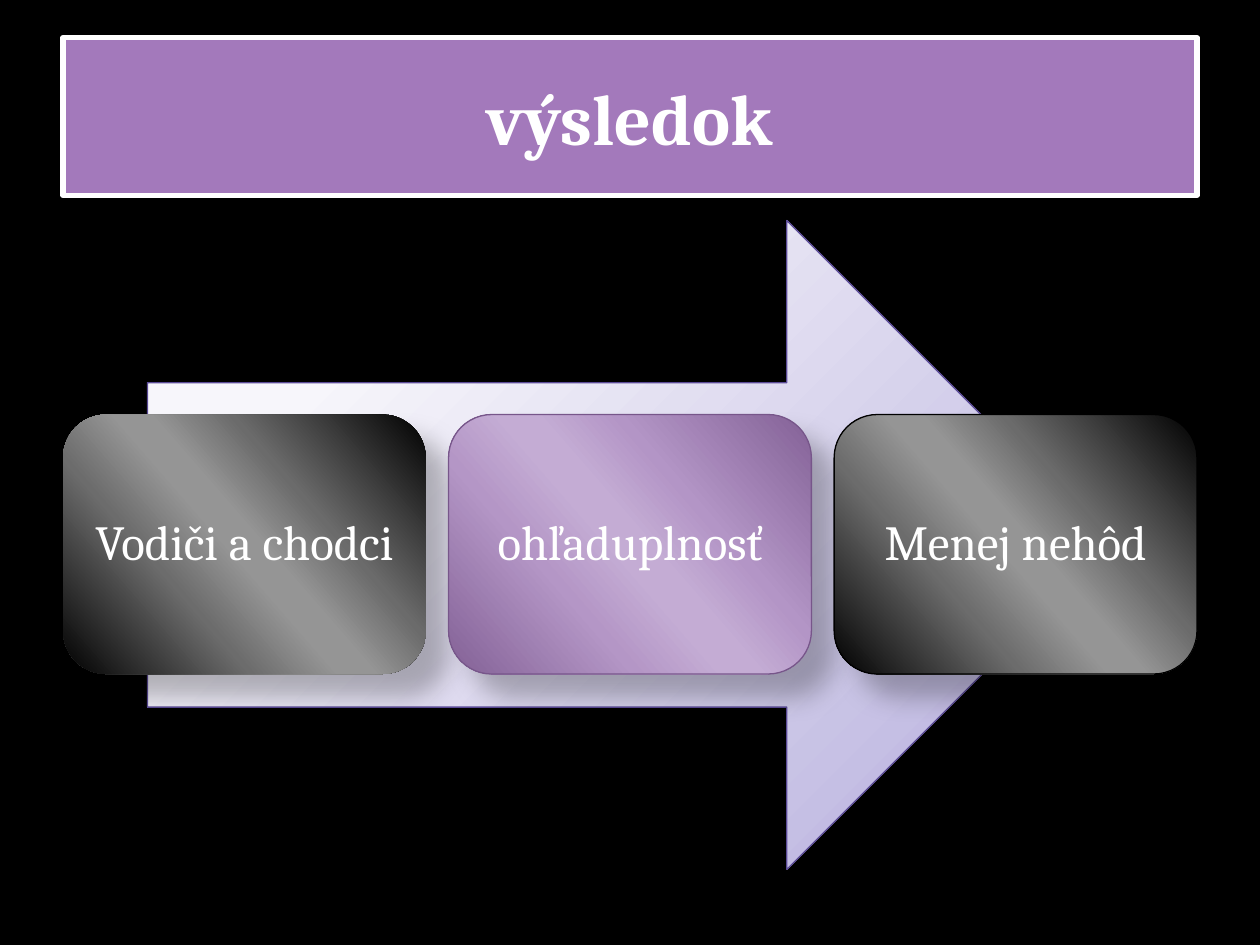
from lxml import etree
from pptx import Presentation
from pptx.dml.color import RGBColor
from pptx.enum.shapes import MSO_SHAPE
from pptx.enum.text import MSO_ANCHOR, PP_ALIGN
from pptx.oxml import parse_xml
from pptx.oxml.ns import nsdecls, qn
from pptx.util import Inches, Pt

RECT, ARROW, CARD = MSO_SHAPE.RECTANGLE, MSO_SHAPE.RIGHT_ARROW, MSO_SHAPE.ROUNDED_RECTANGLE
MIDDLE, CENTER = MSO_ANCHOR.MIDDLE, PP_ALIGN.CENTER

# Content
TITLE = "výsledok"
STEPS = [  # text, gradient, line colour
    ("Vodiči a chodci", "dark", None),
    ("ohľaduplnosť", "violet", "violet_line"),
    ("Menej nehôd", "dark", "black"),
]

# Style
FONT = "Cambria"
COLORS = {
    "black": "000000", "white": "FFFFFF", "title": "A379BB",
    "arrow_line": "5A4A96", "violet_line": "77568A",
}
GRADIENTS = {  # (position in percent, colour)
    "arrow": [(20, "F7F6FB"), (100, "B2AADB")],
    "dark": [(0, "000000"), (33, "6B6B6B"), (47, "959595"),
             (53, "959595"), (68, "6C6C6C"), (100, "000000")],
    "violet": [(0, "836196"), (33, "B395C6"), (47, "C4ACD4"),
               (53, "C4ACD4"), (68, "B496C6"), (100, "836196")],
}
LINEAR = '<a:lin ang="8340000" scaled="0"/>'
RADIAL = ('<a:path path="circle"><a:fillToRect l="-15000" t="-15000" '
          'r="115000" b="115000"/></a:path>')
SOFT_SHADOW = (35, 10.2, 8)  # opacity in percent, blur and distance in points
DEEP_SHADOW = (26, 15, 18)

# Layout
MARGIN, CONTENT_W = 0.5, 9
CARD_W, CARD_H, CARD_TOP = 2.88, 2.06, 3.29
CARD_STEP = (CONTENT_W - CARD_W) / (len(STEPS) - 1)


def rgb(name):
    return RGBColor.from_string(COLORS[name])


def add_shadow(sp, opacity, blur, distance):
    sp.shadow.inherit = False
    effects = sp._element.spPr.find(qn("a:effectLst"))
    effects.append(parse_xml(
        f'<a:outerShdw {nsdecls("a")} blurRad="{Pt(blur)}" dist="{Pt(distance)}" '
        f'dir="2700000" algn="tl" rotWithShape="0"><a:srgbClr val="{COLORS["black"]}">'
        f'<a:alpha val="{opacity * 1000}"/></a:srgbClr></a:outerShdw>'))


def set_gradient(sp, stops, direction):
    sp.fill.gradient()
    grad = sp._element.spPr.find(qn("a:gradFill"))
    for child in list(grad):
        grad.remove(child)
    gs = "".join(f'<a:gs pos="{pos * 1000}"><a:srgbClr val="{color}"/></a:gs>'
                 for pos, color in stops)
    parts = etree.fromstring(f'<a:x {nsdecls("a")}><a:gsLst>{gs}</a:gsLst>{direction}</a:x>')
    grad.extend(list(parts))


def add_block(slide, kind, box, shadow, line=None, line_width=0.75):
    sp = slide.shapes.add_shape(kind, *(Inches(v) for v in box))
    if line:
        sp.line.color.rgb = rgb(line)
        sp.line.width = Pt(line_width)
    else:
        sp.line.fill.background()
    add_shadow(sp, *shadow)
    return sp


def set_text(sp, text, size, bold=False):
    tf = sp.text_frame
    tf.word_wrap = True
    tf.vertical_anchor = MIDDLE
    tf.margin_left = tf.margin_right = Inches(0.05)
    p = tf.paragraphs[0]
    p.text = text
    p.alignment = CENTER
    p.font.name, p.font.size, p.font.bold = FONT, Pt(size), bold
    p.font.color.rgb = rgb("white")
    return p


prs = Presentation()
prs.slide_width, prs.slide_height = Inches(10), Inches(7.5)
slide = prs.slides.add_slide(prs.slide_layouts[6])
slide.background.fill.solid()
slide.background.fill.fore_color.rgb = rgb("black")

# Title bar
title = add_block(slide, RECT, (MARGIN, 0.3, CONTENT_W, 1.25), SOFT_SHADOW, "white", 3)
title.fill.solid()
title.fill.fore_color.rgb = rgb("title")
set_text(title, TITLE, 41, bold=True)

# Arrow behind the steps
arrow = add_block(slide, ARROW, (1.17, 1.75, 7.65, 5.15), SOFT_SHADOW, "arrow_line")
set_gradient(arrow, GRADIENTS["arrow"], RADIAL)

# Step cards
for i, (text, gradient, line) in enumerate(STEPS):
    box = (MARGIN + i * CARD_STEP, CARD_TOP, CARD_W, CARD_H)
    card = add_block(slide, CARD, box, DEEP_SHADOW, line)
    set_gradient(card, GRADIENTS[gradient], LINEAR)
    set_text(card, text, 28).line_spacing = 0.9

prs.save("out.pptx")
